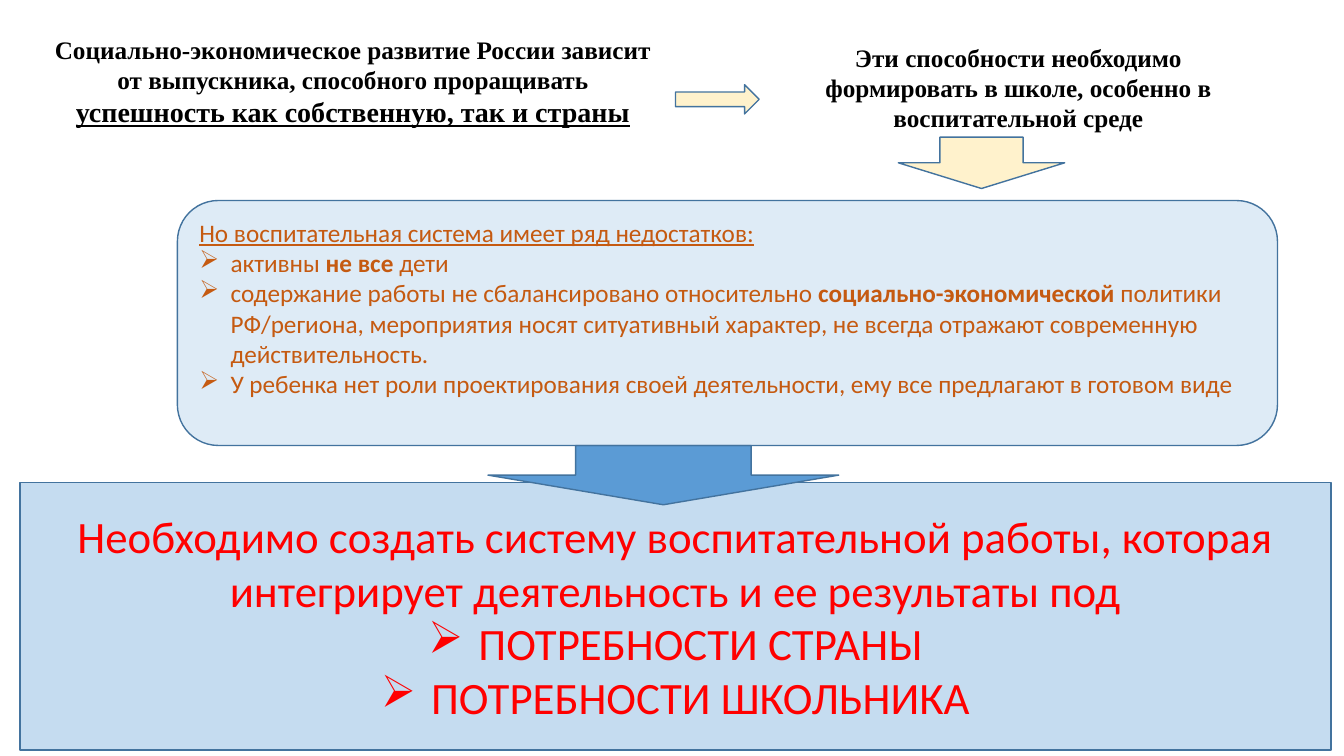
from lxml.etree import SubElement
from pptx import Presentation
from pptx.dml.color import RGBColor
from pptx.enum.shapes import MSO_SHAPE as Shape
from pptx.enum.text import MSO_ANCHOR as Anchor, MSO_AUTO_SIZE as AutoSize, PP_ALIGN as Align
from pptx.oxml.ns import qn
from pptx.util import Inches, Pt

BLUE, BLUE_LINE, CREAM = "5B9BD5", "43739E", "FFF2CC"
BLACK, RED, BROWN = "000000", "FF0000", "C55A11"
SERIF, SANS = "Times New Roman", "Calibri"


def color(hex_value):
    return RGBColor.from_string(hex_value)


def part(box, left, top, width, height):
    """Return the box that takes the given percentages of a larger box."""
    box_left, box_top, box_width, box_height = box
    return (int(box_left + box_width * left / 100), int(box_top + box_height * top / 100),
            int(box_width * width / 100), int(box_height * height / 100))


def add_block(slide, kind, box, fill, opacity=100):
    shape = slide.shapes.add_shape(kind, *box)
    shape.shadow.inherit = False
    shape.fill.solid()
    shape.fill.fore_color.rgb = color(fill)
    if opacity < 100:
        fill_color = shape.fill._xPr.find(qn("a:solidFill"))[0]
        SubElement(fill_color, qn("a:alpha"), val=str(opacity * 1000))
    shape.line.color.rgb = color(BLUE_LINE)
    shape.line.width = Pt(1)
    return shape


def add_bullet(paragraph, indent):
    properties = paragraph._p.get_or_add_pPr()
    properties.set("marL", str(Inches(indent)))
    properties.set("indent", str(-Inches(indent)))
    SubElement(properties, qn("a:buChar"), char="➢")


def write(text_frame, paragraphs, font, size, ink, align, anchor, indent=0):
    """Write paragraphs of (text, font settings) runs; those after the first are bulleted."""
    text_frame.word_wrap = True
    text_frame.auto_size = AutoSize.NONE
    text_frame.vertical_anchor = anchor
    for index, runs in enumerate(paragraphs):
        paragraph = text_frame.add_paragraph() if index else text_frame.paragraphs[0]
        paragraph.alignment = align
        if index:
            add_bullet(paragraph, indent)
        for text, settings in runs:
            run = paragraph.add_run()
            run.text = text
            run.font.name = font
            run.font.size = Pt(size)
            run.font.color.rgb = color(ink)
            for name, value in settings.items():
                setattr(run.font, name, value)


def add_premise(slide, box):
    bold = {"bold": True}
    title = slide.shapes.title
    title.left, title.top, title.width, title.height = part(box, 2.78, 14.5, 46.96, 52)
    write(title.text_frame, [[
        ("Социально-экономическое развитие России зависит от выпускника, "
         "способного проращивать ", bold),
        ("успешность как собственную, так и страны",
         {"bold": True, "underline": True, "size": Pt(20)}),
    ]], SERIF, 18, BLACK, Align.CENTER, Anchor.TOP)
    conclusion = slide.shapes.add_textbox(*part(box, 58.59, 18.5, 34.36, 50.5))
    write(conclusion.text_frame, [[
        ("Эти способности необходимо формировать в школе, особенно в воспитательной среде", bold),
    ]], SERIF, 18, BLACK, Align.CENTER, Anchor.TOP)
    add_block(slide, Shape.RIGHT_ARROW, part(box, 50.26, 42, 6.23, 14.5), CREAM)
    add_block(slide, Shape.DOWN_ARROW, part(box, 66.84, 68, 12.38, 25.5), CREAM)


def add_goal(slide, box):
    panel = add_block(slide, Shape.RECTANGLE, part(box, 0, 12.08, 100, 87.92), BLUE, 35)
    write(panel.text_frame, [
        [("Необходимо создать систему воспитательной работы, которая интегрирует "
          "деятельность и ее результаты под", {})],
        [("ПОТРЕБНОСТИ СТРАНЫ", {})],
        [("ПОТРЕБНОСТИ ШКОЛЬНИКА", {})],
    ], SANS, 32, RED, Align.CENTER, Anchor.MIDDLE, 0.5)
    add_block(slide, Shape.DOWN_ARROW, part(box, 35.69, 0, 26.77, 19.46), BLUE)


def add_shortcomings(slide, box):
    bold = {"bold": True}
    panel = add_block(slide, Shape.ROUNDED_RECTANGLE, box, BLUE, 20)
    panel.text_frame.margin_bottom = Inches(0.35)
    write(panel.text_frame, [
        [("Но воспитательная система имеет ряд недостатков:", {"underline": True})],
        [("активны ", {}), ("не все ", bold), ("дети", {})],
        [("содержание работы не сбалансировано относительно ", {}),
         ("социально-экономической ", bold),
         ("политики РФ/региона, мероприятия носят ситуативный характер, "
          "не всегда отражают современную действительность.", {})],
        [("У ребенка нет роли проектирования своей деятельности, "
          "ему все предлагают в готовом виде", {})],
    ], SANS, 18, BROWN, Align.LEFT, Anchor.MIDDLE, 0.31)


def main():
    presentation = Presentation()
    presentation.slide_width, presentation.slide_height = Inches(13.33), Inches(7.5)
    page = (0, 0, presentation.slide_width, presentation.slide_height)
    slide = presentation.slides.add_slide(presentation.slide_layouts[5])
    add_premise(slide, part(page, 0, 0, 100, 26.67))
    add_goal(slide, part(page, 1.5, 58.93, 97.52, 40.27))
    add_shortcomings(slide, part(page, 13.2, 26.53, 81.85, 32.4))
    presentation.save("out.pptx")


if __name__ == "__main__":
    main()
